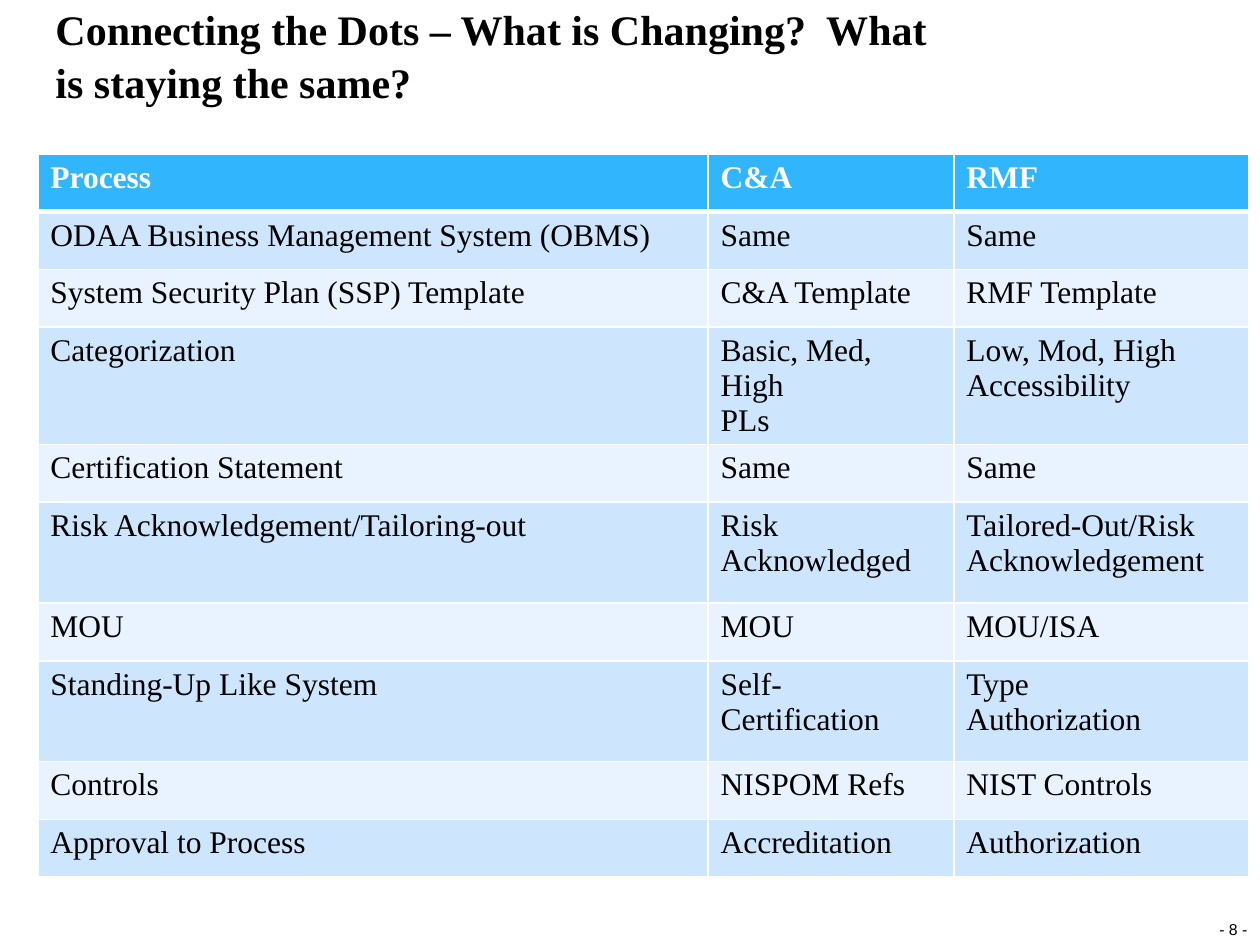
from lxml import etree
from pptx import Presentation
from pptx import util as u
from pptx.dml.color import RGBColor
from pptx.enum import text
from pptx.oxml import ns

Pt = u.Pt
BLACK = RGBColor(0x00, 0x00, 0x00)
WHITE = RGBColor(0xFF, 0xFF, 0xFF)
HEADER_BLUE = RGBColor(0x31, 0xB6, 0xFD)
BAND_DARK = RGBColor(0xCE, 0xE5, 0xFE)
BAND_LIGHT = RGBColor(0xE8, 0xF3, 0xFF)
SERIF = "Times New Roman"
SANS = "Arial"

TITLE = "Connecting the Dots – What is Changing?  What is staying the same?"
COLUMN_WIDTHS = (383, 140.5, 168.5)
SINGLE_HEIGHT, DOUBLE_HEIGHT = 33, 57.6
PROCESSES = (
    ("Process", "C&A", "RMF"),
    ("ODAA Business Management System (OBMS)", "Same", "Same"),
    ("System Security Plan (SSP) Template", "C&A Template", "RMF Template"),
    ("Categorization", "Basic, Med, High\nPLs", "Low, Mod, High\nAccessibility"),
    ("Certification Statement", "Same", "Same"),
    ("Risk Acknowledgement/Tailoring-out", "Risk\nAcknowledged",
     "Tailored-Out/Risk Acknowledgement"),
    ("MOU", "MOU", "MOU/ISA"),
    ("Standing-Up Like System", "Self-\vCertification", "Type\nAuthorization"),
    ("Controls", "NISPOM Refs", "NIST Controls"),
    ("Approval to Process", "Accreditation", "Authorization"),
)


def style_text(frame, font, size, color, bold=False):
    for para in frame.paragraphs:
        for span in para.runs:
            span.font.name = font
            span.font.size = Pt(size)
            span.font.bold = bold
            span.font.color.rgb = color


def place(shape, left, top, width, height):
    shape.left, shape.top = Pt(left), Pt(top)
    shape.width, shape.height = Pt(width), Pt(height)


def set_bare_frame(frame, wrap):
    frame.margin_left = frame.margin_right = 0
    frame.margin_top = frame.margin_bottom = 0
    frame.vertical_anchor = text.MSO_ANCHOR.BOTTOM
    frame.auto_size = text.MSO_AUTO_SIZE.NONE
    frame.word_wrap = wrap


def add_title(page, left, top, width, height):
    title = page.shapes.title
    place(title, left, top, width, height)
    frame = title.text_frame
    frame.text = TITLE
    set_bare_frame(frame, True)
    frame.paragraphs[0].alignment = text.PP_ALIGN.LEFT
    frame.paragraphs[0].line_spacing = 1.06
    style_text(frame, SERIF, 24, BLACK, True)


def add_page_number(page, left, top, width, height):
    box = page.shapes.add_textbox(Pt(left), Pt(top), Pt(width), Pt(height))
    frame = box.text_frame
    frame.text = "- 8 -"
    set_bare_frame(frame, False)
    frame.paragraphs[0].alignment = text.PP_ALIGN.CENTER
    frame.paragraphs[0].line_spacing = 1.06
    style_text(frame, SANS, 9, BLACK)


def set_borders(cell, top_width, bottom_width):
    properties = cell._tc.get_or_add_tcPr()
    sides = (("lnL", 1), ("lnR", 1), ("lnT", top_width), ("lnB", bottom_width))
    for side, width in sides:
        line = etree.SubElement(properties, ns.qn("a:" + side), w=str(Pt(width)))
        fill = etree.SubElement(line, ns.qn("a:solidFill"))
        etree.SubElement(fill, ns.qn("a:srgbClr"), val=str(WHITE))


def add_process_table(page, left, top, width, height):
    frame = page.shapes.add_table(len(PROCESSES), len(COLUMN_WIDTHS),
                                  Pt(left), Pt(top), Pt(width), Pt(height))
    table = frame.table
    for column, column_width in zip(table.columns, COLUMN_WIDTHS):
        column.width = Pt(column_width)
    for index, labels in enumerate(PROCESSES):
        header = index == 0
        band = BAND_DARK if index % 2 else BAND_LIGHT
        tall = any(mark in label for label in labels for mark in "\n\v")
        table.rows[index].height = Pt(DOUBLE_HEIGHT if tall else SINGLE_HEIGHT)
        for cell, label in zip(table.rows[index].cells, labels):
            cell.text_frame.text = label
            style_text(cell.text_frame, SERIF, 18, WHITE if header else BLACK, header)
            set_borders(cell, 3 if index == 1 else 1, 3 if header else 1)
            cell.fill.solid()
            cell.fill.fore_color.rgb = HEADER_BLUE if header else band


def main():
    deck = Presentation()
    deck.slide_width, deck.slide_height = Pt(720), Pt(540)
    page = deck.slides.add_slide(deck.slide_layouts[5])
    add_page_number(page, 693.5, 525, 22.5, 11.5)
    add_title(page, 31.7, -0.7, 507, 62)
    add_process_table(page, 21.6, 88, sum(COLUMN_WIDTHS), 416)
    deck.save("out.pptx")


if __name__ == "__main__":
    main()
